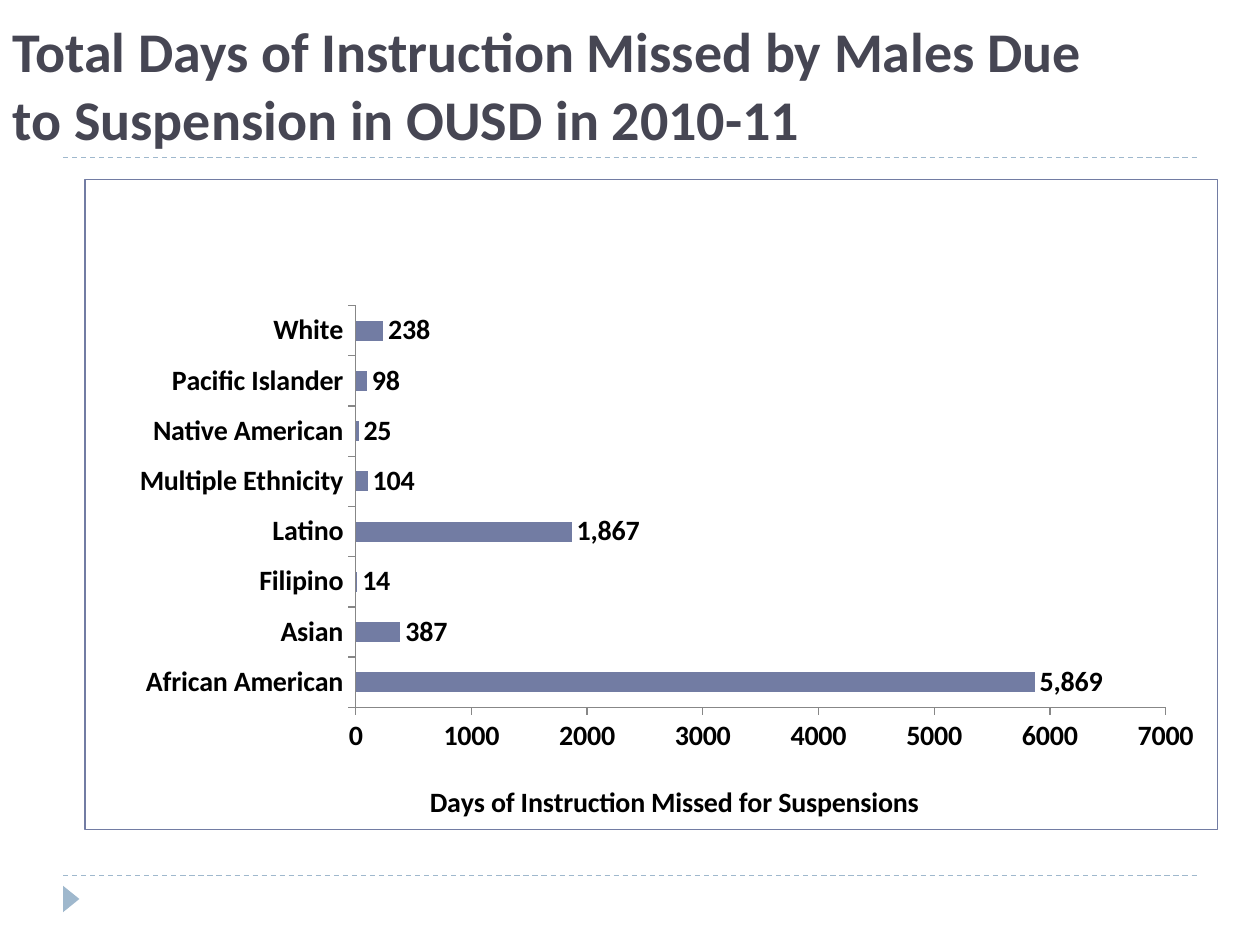
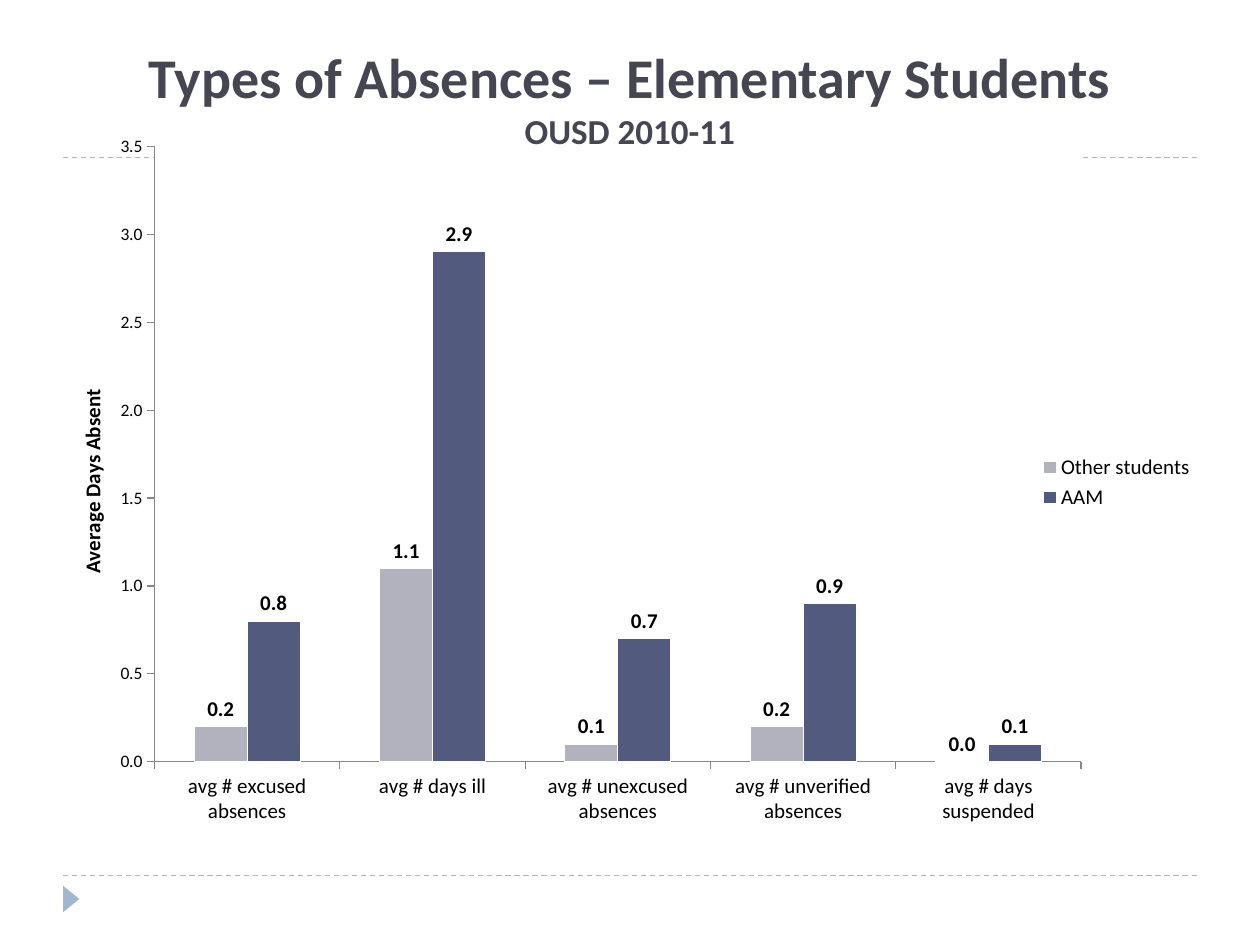
from dataclasses import dataclass

import lxml.etree
import pptx
import pptx.chart.axis
import pptx.chart.chart
import pptx.chart.data
import pptx.dml.color
import pptx.enum.chart
import pptx.enum.dml
import pptx.enum.shapes
import pptx.enum.text
import pptx.oxml
import pptx.oxml.ns
import pptx.slide
import pptx.text.text
import pptx.util

Inches = pptx.util.Inches
Pt = pptx.util.Pt
RGBColor = pptx.dml.color.RGBColor
qn = pptx.oxml.ns.qn

# Shared style
FONT = "Calibri"
TITLE_COLOR = RGBColor(0x46, 0x46, 0x53)
ACCENT = RGBColor(0x9F, 0xB8, 0xCD)
AXIS_GRAY = RGBColor(0x87, 0x87, 0x87)
BLACK = RGBColor(0, 0, 0)
WHITE = RGBColor(0xFF, 0xFF, 0xFF)
BLUE = RGBColor(0x72, 0x7C, 0xA3)
NAVY = RGBColor(0x52, 0x5B, 0x7E)
LIGHT_GRAY = RGBColor(0xB2, 0xB2, 0xBE)
RULE_TOPS = (6.95, 1.25)


@dataclass
class TitleLine:
    text: str
    size: int


@dataclass
class BarSeries:
    name: str
    values: tuple[float, ...]
    color: RGBColor


@dataclass
class BarChart:
    kind: pptx.enum.chart.XL_CHART_TYPE
    frame: tuple[float, float, float, float]
    plot_frame: tuple[float, float, float, float]
    categories: tuple[str, ...]
    series: tuple[BarSeries, ...]
    value_title: str
    value_title_place: tuple[float, float]
    maximum: float
    step: float
    value_format: str
    label_format: str
    value_size: int
    text_size: int
    bold: bool = False
    legend: bool = False
    bar_outline: RGBColor | None = None


@dataclass
class ChartPage:
    title: tuple[TitleLine, ...]
    title_left: float
    alignment: pptx.enum.text.PP_ALIGN
    chart: BarChart


PAGES = (
    ChartPage(
        title=(TitleLine("Total Days of Instruction Missed by Males Due "
                         "to Suspension in OUSD in 2010-11", 32),),
        title_left=0,
        alignment=pptx.enum.text.PP_ALIGN.LEFT,
        chart=BarChart(
            kind=pptx.enum.chart.XL_CHART_TYPE.BAR_CLUSTERED,
            frame=(0.67, 1.42, 9, 5.17),
            plot_frame=(0.239, 0.194, 0.715, 0.618),
            categories=("African American", "Asian", "Filipino", "Latino",
                        "Multiple Ethnicity", "Native American",
                        "Pacific Islander", "White"),
            series=(BarSeries("Series 1", (5869, 387, 14, 1867, 104, 25, 98, 238), BLUE),),
            value_title="Days of Instruction Missed for Suspensions",
            value_title_place=(0.3, 0.92),
            maximum=7000, step=1000, value_format="General", label_format="#,##0",
            value_size=16, text_size=16, bold=True,
        ),
    ),
    ChartPage(
        title=(TitleLine("Types of Absences – Elementary Students", 32),
               TitleLine("OUSD 2010-11", 20)),
        title_left=0.5,
        alignment=pptx.enum.text.PP_ALIGN.CENTER,
        chart=BarChart(
            kind=pptx.enum.chart.XL_CHART_TYPE.COLUMN_CLUSTERED,
            frame=(0.5, 1.08, 9.08, 5.5),
            plot_frame=(0.08, 0.015, 0.81, 0.888),
            categories=("avg # excused absences", "avg # days ill",
                        "avg # unexcused absences", "avg # unverified absences",
                        "avg # days suspended"),
            series=(BarSeries("Other students", (0.2, 1.1, 0.1, 0.2, 0), LIGHT_GRAY),
                    BarSeries("AAM", (0.8, 2.9, 0.7, 0.9, 0.1), NAVY)),
            value_title="Average Days Absent",
            value_title_place=(0.01, 0.36),
            maximum=3.5, step=0.5, value_format="0.0", label_format="0.0",
            value_size=10, text_size=12, legend=True, bar_outline=WHITE,
        ),
    ),
)


def style_font(font: pptx.text.text.Font, size: int, bold: bool,
               color: RGBColor = BLACK) -> None:
    font.name = FONT
    font.size = Pt(size)
    font.bold = bold
    font.color.rgb = color


def add_furniture(page: pptx.slide.Slide) -> None:
    """Draw the dashed rules and the corner marker."""
    for top in RULE_TOPS:
        rule = page.shapes.add_connector(
            pptx.enum.shapes.MSO_CONNECTOR.STRAIGHT,
            Inches(0.5), Inches(top), Inches(9.5), Inches(top))
        rule.line.color.rgb = ACCENT
        rule.line.width = Pt(0.75)
        rule.line.dash_style = pptx.enum.dml.MSO_LINE.DASH
        lxml.etree.SubElement(rule._element.spPr, qn("a:effectLst"))
    marker = page.shapes.add_shape(
        pptx.enum.shapes.MSO_SHAPE.ISOSCELES_TRIANGLE,
        Inches(0.46), Inches(7.07), Inches(0.21), Inches(0.13))
    marker.rotation = 90
    marker.shadow.inherit = False
    marker.fill.solid()
    marker.fill.fore_color.rgb = ACCENT
    marker.line.fill.background()


def add_title(page: pptx.slide.Slide, content: ChartPage) -> None:
    box = page.shapes.add_textbox(
        Inches(content.title_left), Inches(0.17), Inches(9), Inches(1.08))
    frame = box.text_frame
    frame.word_wrap = True
    frame.vertical_anchor = pptx.enum.text.MSO_ANCHOR.BOTTOM
    para = frame.paragraphs[0]
    para.alignment = content.alignment
    for index, line in enumerate(content.title):
        if index:
            para.add_line_break()
        span = para.add_run()
        span.text = line.text
        style_font(span.font, line.size, True, TITLE_COLOR)


def set_layout(parent: lxml.etree._Element, index: int,
               place: tuple[float, ...], inner: bool = False) -> None:
    """Place a chart part by fractions of the chart: x, y and maybe w, h."""
    for old in parent.findall(qn("c:layout")):
        parent.remove(old)
    layout = pptx.oxml.parse_xml(
        f'<c:layout {pptx.oxml.ns.nsdecls("c")}><c:manualLayout/></c:layout>')
    settings = [("layoutTarget", "inner")] if inner else []
    settings += [("xMode", "edge"), ("yMode", "edge")]
    settings += [(name, str(value)) for name, value in zip("xywh", place)]
    for name, value in settings:
        lxml.etree.SubElement(layout[0], qn(f"c:{name}"), val=value)
    parent.insert(index, layout)


def area_format(fill: RGBColor | None, border: RGBColor | None) -> lxml.etree._Element:
    """Make the fill and border of a chart area or plot area."""
    def paint(color: RGBColor | None) -> str:
        if color is None:
            return "<a:noFill/>"
        return f'<a:solidFill><a:srgbClr val="{color}"/></a:solidFill>'

    return pptx.oxml.parse_xml(
        f'<c:spPr {pptx.oxml.ns.nsdecls("c", "a")}>{paint(fill)}'
        f'<a:ln w="{Pt(0.75)}">{paint(border)}</a:ln></c:spPr>')


def style_axis(axis: pptx.chart.axis._BaseAxis, size: int, bold: bool) -> None:
    axis.has_major_gridlines = False
    axis.major_tick_mark = pptx.enum.chart.XL_TICK_MARK.OUTSIDE
    axis.minor_tick_mark = pptx.enum.chart.XL_TICK_MARK.NONE
    axis.format.line.color.rgb = AXIS_GRAY
    axis.format.line.width = Pt(0.75)
    style_font(axis.tick_labels.font, size, bold)


def style_value_axis(axis: pptx.chart.axis.ValueAxis, content: BarChart) -> None:
    style_axis(axis, content.value_size, content.bold)
    axis.minimum_scale = 0
    axis.maximum_scale = content.maximum
    axis.major_unit = content.step
    axis.tick_labels.number_format = content.value_format
    axis.tick_labels.number_format_is_linked = False
    span = axis.axis_title.text_frame.paragraphs[0].add_run()
    span.text = content.value_title
    style_font(span.font, content.text_size, True)
    set_layout(axis.axis_title._element, 1, content.value_title_place)


def style_series(chart: pptx.chart.chart.Chart, content: BarChart) -> None:
    plot = chart.plots[0]
    plot.gap_width = 150
    plot.overlap = 0
    plot.vary_by_categories = False
    for bars, series in zip(plot.series, content.series):
        bars.invert_if_negative = False
        bars.format.fill.solid()
        bars.format.fill.fore_color.rgb = series.color
        if content.bar_outline is not None:
            bars.format.line.color.rgb = content.bar_outline
        labels = bars.data_labels
        labels.show_value = True
        labels.position = pptx.enum.chart.XL_LABEL_POSITION.OUTSIDE_END
        labels.number_format = content.label_format
        labels.number_format_is_linked = False
        style_font(labels.font, content.text_size, True)


def add_bar_chart(page: pptx.slide.Slide, content: BarChart) -> None:
    data = pptx.chart.data.CategoryChartData()
    data.categories = content.categories
    for series in content.series:
        data.add_series(series.name, series.values)
    chart = page.shapes.add_chart(
        content.kind, *(Inches(length) for length in content.frame), data).chart
    chart.has_title = False
    style_font(chart.font, content.value_size, content.bold)
    style_axis(chart.category_axis, content.text_size, content.bold)
    style_value_axis(chart.value_axis, content)
    style_series(chart, content)

    chart.has_legend = content.legend
    if content.legend:
        chart.legend.position = pptx.enum.chart.XL_LEGEND_POSITION.RIGHT
        chart.legend.include_in_layout = False
        style_font(chart.legend.font, content.text_size, False)

    # The legend chart is see-through outside its white plot area
    root = chart._chartSpace
    plot_area = root.chart.plotArea
    set_layout(plot_area, 0, content.plot_frame, inner=True)
    plot_area.append(area_format(WHITE if content.legend else None, None))
    frame_colors = (None, None) if content.legend else (WHITE, BLUE)
    root.chart.addnext(area_format(*frame_colors))


def main() -> None:
    deck = pptx.Presentation()
    deck.slide_width = Inches(10)
    deck.slide_height = Inches(7.5)
    for content in PAGES:
        page = deck.slides.add_slide(deck.slide_layouts[6])
        add_furniture(page)
        add_title(page, content)
        add_bar_chart(page, content.chart)
    deck.save("out.pptx")


if __name__ == "__main__":
    main()
